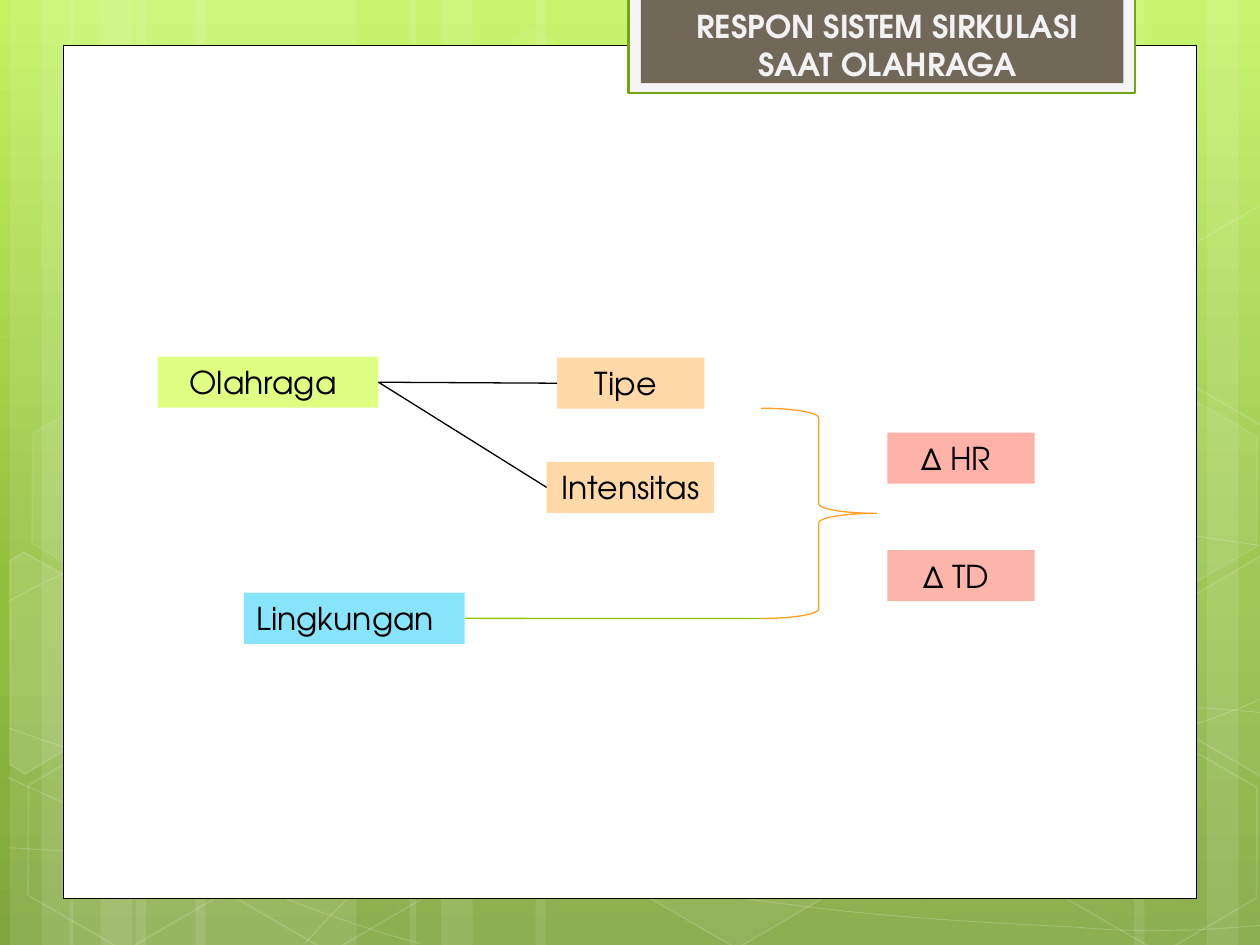
from copy import deepcopy
from dataclasses import dataclass

from lxml.etree import SubElement
from pptx import Presentation
from pptx.dml.color import RGBColor
from pptx.enum.shapes import MSO_CONNECTOR, MSO_SHAPE
from pptx.enum.text import MSO_ANCHOR, MSO_AUTO_SIZE, PP_ALIGN
from pptx.oxml.ns import qn
from pptx.util import Cm, Pt


@dataclass(frozen=True)
class Theme:
    font: str = "TeX Gyre Adventor"
    text_size: float = 18
    text: str = "000000"
    title: str = "F2F2F2"
    white: str = "FFFFFF"
    panel_line: str = "000000"
    banner: str = "F5F5F5"
    banner_line: str = "74A510"
    plaque: str = "71685A"
    activity: str = "DFFF82"
    factor: str = "FFD9A7"
    environment: str = "88E4FA"
    heart_rate: str = "FEB2A8"
    blood_pressure: str = "FBB5AB"
    brace: str = "FEA022"
    environment_line: str = "94C600"
    gradient: tuple = ((0, "C3F35F"), (0.62, "93BF3F"), (1, "81A53E"))


@dataclass(frozen=True)
class Box:
    left: float
    top: float
    width: float
    height: float

    def inside(self, left, top, width, height):
        return Box(self.left + left, self.top + top, width, height)

    def point(self, x, y):
        return Cm(self.left + x), Cm(self.top + y)

    def lengths(self):
        return [Cm(value) for value in (self.left, self.top, self.width, self.height)]


THEME = Theme()
SLIDE = Box(0, 0, 25.4, 19.05)
PANEL = Box(1.27, 0.91, 22.86, 17.2)
BANNER = Box(12.67, -0.05, 10.21, 1.93)
DIAGRAM = Box(3.18, 7.19, 17.67, 5.79)

BANDS = [(2.74, 4.45), (0.2, 1.27), (0.84, 2.11), (3.94, 4.45), (1.4, 1.27), (2.03, 2.11),
         (18.62, 4.45), (24.33, 1.27), (22.86, 2.11), (10.8, 7.82), (8.26, 1.27), (8.89, 2.11)]

CURVES = [
    [(0.18, 17.09), (1.55, 17.17), (2.92, 17.25), (4.83, 17.22), (6.73, 17.2), (9.09, 17.15),
     (11.63, 16.89), (14.17, 16.64), (17.78, 16.15), (20.12, 15.67), (22.43, 15.19),
     (24.82, 14.43), (25.58, 14)],
    [(0.18, 12.12), (0.91, 11.71), (1.65, 11.33), (3.07, 10.95), (4.52, 10.57), (6.58, 10.01),
     (8.81, 9.83), (11.07, 9.65), (13.82, 9.63), (16.61, 9.83), (19.41, 10.03),
     (24.05, 10.82), (25.58, 11.02)],
    [(0.15, 15.67), (3.23, 17.07), (6.27, 18.47), (8.48, 19.02)],
    [(0.18, 14.68), (0.97, 14.96), (1.78, 15.24), (3.25, 15.65), (4.72, 16.03), (6.93, 16.66),
     (9.07, 17.09), (11.18, 17.53), (13.84, 17.98), (15.95, 18.24), (18.06, 18.52),
     (20.32, 18.62), (21.67, 18.69), (22.99, 18.8), (23.34, 18.75), (24, 18.75),
     (24.66, 18.72), (25.12, 18.68), (25.58, 18.64)],
    [(6.15, 19.02), (6.6, 18.52), (7.06, 18.01), (7.67, 17.55), (8.28, 17.09), (9.14, 16.59),
     (9.86, 16.23), (10.57, 15.88), (11, 15.72), (11.94, 15.47), (12.85, 15.21),
     (14.55, 14.86), (15.44, 14.68), (16.36, 14.5), (16.48, 14.5), (17.27, 14.45),
     (18.06, 14.38), (19.3, 14.3), (20.17, 14.27), (21.06, 14.25), (22.5, 14.27),
     (24.21, 14.27), (24.66, 14.3), (25.1, 14.33), (25.55, 14.38)],
]

HEXAGONS = [(8.48, 0.91, 4, 8), (12.62, 14.96, 6, 12), (0.28, 15.01, None, 12),
            (0.36, 7.92, 7, 8), (4.42, 15.04, None, 12), (21.18, 15.06, None, 12),
            (21.18, 7.98, 7, 8)]

LEFT_EDGE = [(0.2, 11.3), (0.48, 11.13), (2.44, 12.24), (2.41, 14.48), (0.51, 15.6), (0.2, 15.42)]
RIGHT_EDGE = [(23.52, 12.32), (25.43, 11.2), (25.63, 11.33), (25.63, 15.57), (25.45, 15.67),
              (23.52, 14.55)]
CUT_HEXAGONS = [(LEFT_EDGE, 10), (RIGHT_EDGE, 4), ([(x, y - 7.08) for x, y in RIGHT_EDGE], None)]


def apply(target, values):
    for name, value in values.items():
        setattr(target, name, value)


def paint(fill, color, opacity=100):
    fill.solid()
    fill.fore_color.rgb = RGBColor.from_string(color)
    if opacity < 100:
        color_element = fill._xPr.find(qn("a:solidFill"))[0]
        SubElement(color_element, qn("a:alpha"), val=str(opacity * 1000))


def style(shape, fill=None, fill_opacity=100, line=None, line_width=1, line_opacity=100):
    shape.shadow.inherit = False
    if fill:
        paint(shape.fill, fill, fill_opacity)
    else:
        shape.fill.background()
    if line:
        paint(shape.line.fill, line, line_opacity)
        shape.line.width = Pt(line_width)
    else:
        shape.line.fill.background()


def add_shape(slide, kind, box, **look):
    shape = slide.shapes.add_shape(kind, *box.lengths())
    style(shape, **look)
    return shape


def add_outline(slide, box, points, closed, **look):
    start, *rest = [box.point(x, y) for x, y in points]
    builder = slide.shapes.build_freeform(*start)
    builder.add_line_segments(rest, close=closed)
    shape = builder.convert_to_shape()
    style(shape, **look)
    return shape


def add_curve(slide, box, controls, **look):
    shape = add_outline(slide, box, controls, False, **look)
    outline = shape.element.find(".//" + qn("a:path"))
    segments = outline.findall(qn("a:lnTo"))
    for first in range(0, len(segments), 3):
        curve = SubElement(outline, qn("a:cubicBezTo"))
        for segment in segments[first:first + 3]:
            curve.append(segment[0])
            outline.remove(segment)


def set_text(shape, text, color, bold=False, **frame_format):
    frame = shape.text_frame
    apply(frame, {"word_wrap": True, "auto_size": MSO_AUTO_SIZE.NONE, **frame_format})
    paragraph = frame.paragraphs[0]
    paragraph.alignment = PP_ALIGN.CENTER
    run = paragraph.add_run()
    run.text = text
    apply(run.font, {"name": THEME.font, "size": Pt(THEME.text_size), "bold": bold})
    run.font.color.rgb = RGBColor.from_string(color)


def add_line(slide, start, end, color):
    connector = slide.shapes.add_connector(MSO_CONNECTOR.STRAIGHT, *start, *end)
    paint(connector.line.fill, color)
    connector.line.width = Pt(0.75)
    SubElement(connector.element.spPr, qn("a:effectLst"))
    return connector


def draw_backdrop(slide, box):
    fill = slide.background.fill
    fill.gradient()
    fill.gradient_angle = 270
    stop_list = slide.element.find(".//" + qn("a:gsLst"))
    stop_list.insert(1, deepcopy(stop_list[0]))
    for stop, (position, color) in zip(fill.gradient_stops, THEME.gradient):
        stop.position = position
        stop.color.rgb = RGBColor.from_string(color)
    for left, width in BANDS:
        add_shape(slide, MSO_SHAPE.RECTANGLE, box.inside(left, 0, width, box.height),
                  fill=THEME.white, fill_opacity=10)
    for controls in CURVES:
        add_curve(slide, box, controls, line=THEME.white, line_width=0.5, line_opacity=20)
    for left, top, opacity, line_opacity in HEXAGONS:
        hexagon = add_shape(slide, MSO_SHAPE.HEXAGON, box.inside(left, top, 4.45, 3.86),
                            fill=opacity and THEME.white, fill_opacity=opacity or 100,
                            line=THEME.white, line_opacity=line_opacity)
        hexagon.rotation = 30
        hexagon.adjustments[0] = 0.285
    for points, opacity in CUT_HEXAGONS:
        add_outline(slide, box, points, True, fill=opacity and THEME.white,
                    fill_opacity=opacity or 100, line=THEME.white, line_opacity=12)


def draw_panel(slide, box):
    add_shape(slide, MSO_SHAPE.RECTANGLE, box, fill=THEME.white,
              line=THEME.panel_line, line_width=0.5)


def draw_title(slide, box):
    add_shape(slide, MSO_SHAPE.RECTANGLE, box, fill=THEME.banner,
              line=THEME.banner_line, line_width=1.25)
    add_shape(slide, MSO_SHAPE.RECTANGLE, box.inside(0.25, 0, 9.73, 1.73), fill=THEME.plaque)
    title = slide.shapes.title
    apply(title, dict(zip(("left", "top", "width", "height"),
                          box.inside(0.56, 0.06, 9.32, 1.8).lengths())))
    set_text(title, "RESPON SISTEM SIRKULASI SAAT OLAHRAGA", THEME.title, bold=True,
             vertical_anchor=MSO_ANCHOR.TOP)
    slide.shapes.element.append(title.element)


def draw_diagram(slide, box):
    def add_node(text, left, top, width, color, shift=0.2):
        node = add_shape(slide, MSO_SHAPE.RECTANGLE, box.inside(left, top, width, 1.03), fill=color)
        set_text(node, text, THEME.text, vertical_anchor=MSO_ANCHOR.MIDDLE,
                 margin_left=Cm(0.1), margin_right=Cm(0.1 + shift))
        return node

    exercise = add_node("Olahraga", 0, 0, 4.45, THEME.activity)
    kind = add_node("Tipe", 8.05, 0.02, 2.97, THEME.factor)
    intensity = add_node("Intensitas", 7.84, 2.12, 3.38, THEME.factor, shift=0)
    environment = add_node("Lingkungan", 1.74, 4.76, 4.45, THEME.environment, shift=0.36)
    add_node("∆ HR", 14.71, 1.53, 2.97, THEME.heart_rate)
    add_node("∆ TD", 14.71, 3.9, 2.97, THEME.blood_pressure)

    for factor in (kind, intensity):
        connector = add_line(slide, (0, 0), (0, 0), THEME.text)
        connector.begin_connect(exercise, 3)
        connector.end_connect(factor, 1)
    add_shape(slide, MSO_SHAPE.RIGHT_BRACE, box.inside(12.16, 1.04, 2.33, 4.24),
              line=THEME.brace, line_width=0.75)
    connector = add_line(slide, box.point(6.19, 5.28), box.point(12.16, 5.28),
                         THEME.environment_line)
    connector.begin_connect(environment, 3)


def main():
    presentation = Presentation()
    apply(presentation, {"slide_width": Cm(SLIDE.width), "slide_height": Cm(SLIDE.height)})
    slide = presentation.slides.add_slide(presentation.slide_layouts[5])
    draw_backdrop(slide, SLIDE)
    draw_panel(slide, PANEL)
    draw_diagram(slide, DIAGRAM)
    draw_title(slide, BANNER)
    presentation.save("out.pptx")


if __name__ == "__main__":
    main()
